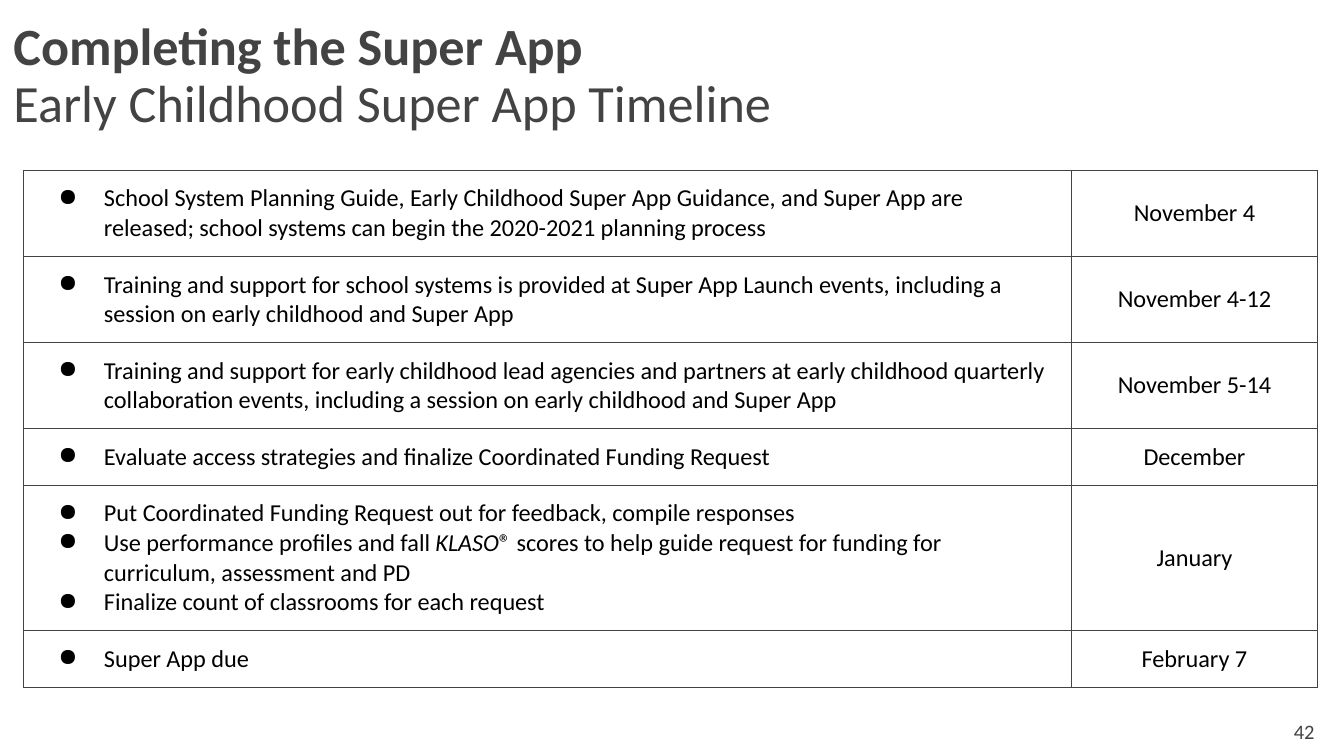
from lxml import etree
from pptx import Presentation
from pptx import util as u
from pptx.dml.color import RGBColor
from pptx.enum import text
from pptx.oxml import ns

GRAY = RGBColor(0x43, 0x43, 0x43)
BLACK = RGBColor(0, 0, 0)

# Each row: height, bullets (each a list of text and italic runs), date
TIMELINE = [
    (46, [[("School System Planning Guide, Early Childhood Super App Guidance, and Super App are "
            "released; school systems can begin the 2020-2021 planning process", False)]],
     "November 4"),
    (46, [[("Training and support for school systems is provided at Super App Launch events, "
            "including a session on early childhood and Super App", False)]],
     "November 4-12"),
    (46, [[("Training and support for early childhood lead agencies and partners at early childhood "
            "quarterly collaboration events, including a session on early childhood and Super App",
            False)]],
     "November 5-14"),
    (30.4, [[("Evaluate access strategies and finalize Coordinated Funding Request", False)]],
     "December"),
    (77.6, [[("Put Coordinated Funding Request out for feedback, compile responses", False)],
            [("Use performance profiles and fall ", False), ("KLASO", True),
             ("® scores to help guide request for funding for curriculum, assessment and PD", False)],
            [("Finalize count of classrooms for each request", False)]],
     "January"),
    (30.2, [[("Super App due", False)]], "February 7"),
]


class SlideBuilder:
    """Holds the style and the current slide."""
    font_name = "Calibri"
    inset = 7.2
    border = 0.75

    def __init__(self, slide):
        self.slide = slide

    def add_run(self, paragraph, words, size, color, bold=False, italic=False):
        run = paragraph.add_run()
        run.text = words
        font = run.font
        font.name, font.size = self.font_name, u.Pt(size)
        font.bold, font.italic = bold, italic
        font.color.rgb = color

    def paragraphs(self, frame, count):
        return [frame.paragraphs[0]] + [frame.add_paragraph() for _ in range(count - 1)]

    def title(self, left, top, width, height, lines):
        shape = self.slide.shapes.title
        shape.left, shape.top = u.Pt(left), u.Pt(top)
        shape.width, shape.height = u.Pt(width), u.Pt(height)
        frame = shape.text_frame
        frame.auto_size = text.MSO_AUTO_SIZE.NONE
        frame.vertical_anchor = text.MSO_ANCHOR.MIDDLE
        frame.margin_left = frame.margin_right = u.Pt(self.inset)
        frame.margin_top = frame.margin_bottom = u.Pt(self.inset)
        for paragraph, (words, bold) in zip(self.paragraphs(frame, len(lines)), lines):
            paragraph.alignment = text.PP_ALIGN.LEFT
            paragraph.line_spacing = 0.9
            self.add_run(paragraph, words, 28, GRAY, bold)

    def page_number(self, left, top, width, height, number):
        shape = self.slide.shapes.add_textbox(u.Pt(left), u.Pt(top), u.Pt(width), u.Pt(height))
        frame = shape.text_frame
        frame.word_wrap = True
        frame.vertical_anchor = text.MSO_ANCHOR.MIDDLE
        paragraph = frame.paragraphs[0]
        paragraph.alignment = text.PP_ALIGN.RIGHT
        self.add_run(paragraph, number, 11, GRAY)

    def bullet(self, paragraph):
        properties = paragraph._p.get_or_add_pPr()
        properties.set("marL", str(u.Pt(36)))
        properties.set("indent", str(u.Pt(-24.5)))
        color = etree.SubElement(properties, ns.qn("a:buClr"))
        etree.SubElement(color, ns.qn("a:srgbClr"), val=str(BLACK))
        etree.SubElement(properties, ns.qn("a:buChar"), char="●")

    def format_cell(self, cell):
        cell.vertical_anchor = text.MSO_ANCHOR.MIDDLE
        cell.margin_left = cell.margin_right = u.Pt(self.inset)
        cell.margin_top = cell.margin_bottom = u.Pt(self.inset)
        cell.fill.background()
        properties = cell._tc.get_or_add_tcPr()
        for position, side in enumerate(("lnL", "lnR", "lnT", "lnB")):
            line = etree.Element(ns.qn(f"a:{side}"), w=str(u.Pt(self.border)))
            fill = etree.SubElement(line, ns.qn("a:solidFill"))
            etree.SubElement(fill, ns.qn("a:srgbClr"), val=str(GRAY))
            properties.insert(position, line)

    def timeline(self, left, top, widths, rows):
        height = sum(row[0] for row in rows)
        table = self.slide.shapes.add_table(
            len(rows), len(widths), u.Pt(left), u.Pt(top), u.Pt(sum(widths)), u.Pt(height)).table
        table.first_row = table.horz_banding = False
        for column, width in zip(table.columns, widths):
            column.width = u.Pt(width)
        for row, (row_height, bullets, date) in zip(table.rows, rows):
            row.height = u.Pt(row_height)
            task_cell, date_cell = row.cells
            self.format_cell(task_cell)
            self.format_cell(date_cell)
            for paragraph, runs in zip(self.paragraphs(task_cell.text_frame, len(bullets)), bullets):
                self.bullet(paragraph)
                for words, italic in runs:
                    self.add_run(paragraph, words, 13, BLACK, italic=italic)
            paragraph = date_cell.text_frame.paragraphs[0]
            paragraph.alignment = text.PP_ALIGN.CENTER
            self.add_run(paragraph, date, 13, BLACK)


def main():
    presentation = Presentation()
    presentation.slide_width, presentation.slide_height = u.Pt(720), u.Pt(405)
    builder = SlideBuilder(presentation.slides.add_slide(presentation.slide_layouts[5]))

    # Heading
    builder.title(0, 0, 720, 82.8, [("Completing the Super App", True),
                                    ("Early Childhood Super App Timeline", False)])
    # Timeline table
    builder.timeline(12.5, 91.3, (561.4, 132), TIMELINE)
    # Footer
    builder.page_number(535.7, 378, 175.7, 27.4, "42")

    presentation.save("out.pptx")


if __name__ == "__main__":
    main()
